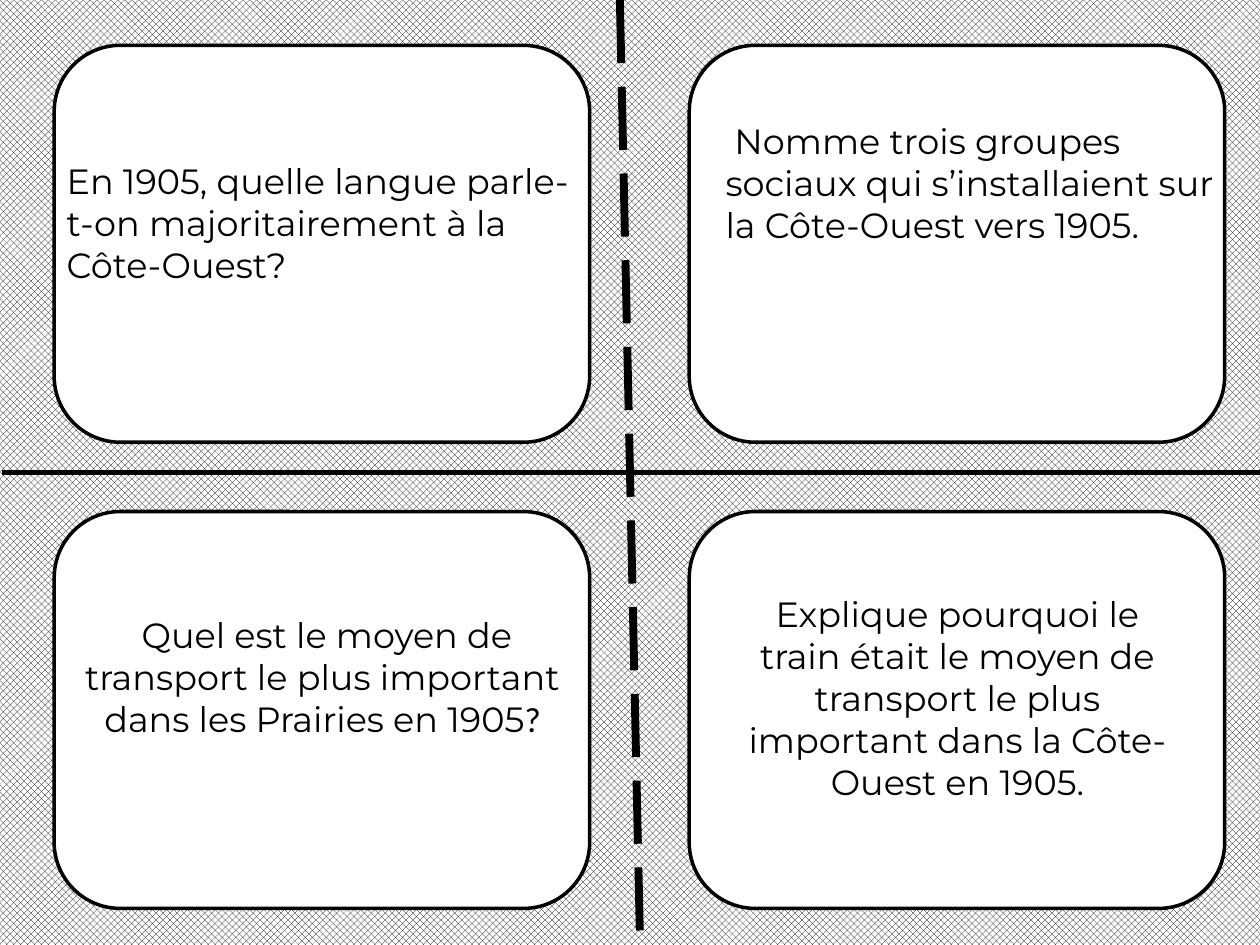
from lxml import etree
from pptx import Presentation
from pptx.dml.color import RGBColor
from pptx.enum import dml, shapes, text
from pptx.oxml.ns import qn
from pptx.util import Inches, Pt

BLACK = RGBColor(0, 0, 0)
WHITE = RGBColor(255, 255, 255)
FONT = "Montserrat"
LEFT, CENTER = text.PP_ALIGN.LEFT, text.PP_ALIGN.CENTER

COLUMNS, ROWS = (0.43, 5.47), (0.36, 4.06)
CARD_W, CARD_H = 4.25, 3.15

DIVIDERS = [
    ((4.92, 0), (5.08, 7.5), 4.5, dml.MSO_LINE.LONG_DASH),
    ((0.02, 3.75), (10.22, 3.75), 3, dml.MSO_LINE.SOLID),
]

QUESTIONS = [
    ((0.43, 1.22, 4.25, 1.45), LEFT, 0, [
        ("En 1905, quelle langue parle-t-on majoritairement à la Côte-Ouest?", FONT)]),
    ((0.55, 4.82, 4.02, 1.45), CENTER, 0.07, [
        ("Quel est le moyen de transport le plus important dans les Prairies en 1905", FONT),
        ("?", "Calibri")]),
    ((5.66, 0.9, 4.09, 1.78), LEFT, 0.07, [
        ("Nomme trois groupes sociaux qui s’installaient sur la Côte-Ouest vers 1905.", FONT)]),
    ((5.75, 4.65, 3.7, 2.12), CENTER, 0, [
        ("Explique pourquoi le train était le moyen de transport le plus important "
         "dans la Côte-Ouest en 1905.", FONT)]),
]


def add_divider(s, start, end, width, dash):
    line = s.shapes.add_connector(
        shapes.MSO_CONNECTOR.STRAIGHT, *map(Inches, start + end))
    line.line.color.rgb = BLACK
    line.line.width = Pt(width)
    line.line.dash_style = dash
    etree.SubElement(line._element.spPr, qn("a:effectLst"))


def add_card(s, x, y):
    sp = s.shapes.add_shape(
        shapes.MSO_SHAPE.ROUNDED_RECTANGLE, *map(Inches, (x, y, CARD_W, CARD_H)))
    sp.shadow.inherit = False
    sp.fill.solid()
    sp.fill.fore_color.rgb = WHITE
    sp.line.color.rgb = BLACK
    sp.line.width = Pt(2)


def add_question(s, box, align, indent, runs):
    tf = s.shapes.add_textbox(*map(Inches, box)).text_frame
    tf.word_wrap = True
    p = tf.paragraphs[0]
    p.alignment = align
    if indent:
        p._p.get_or_add_pPr().set("indent", str(Inches(indent)))
    for words, font in runs:
        r = p.add_run()
        r.text = words
        r.font.name = font
        r.font.size = Pt(20)
        r.font.color.rgb = BLACK


def main():
    prs = Presentation()
    prs.slide_width, prs.slide_height = Inches(10), Inches(7.5)
    s = prs.slides.add_slide(prs.slide_layouts[6])
    fill = s.background.fill
    fill.patterned()
    fill.pattern = dml.MSO_PATTERN.SOLID_DIAMOND
    fill.fore_color.rgb = BLACK
    fill.back_color.rgb = WHITE

    for divider in DIVIDERS:
        add_divider(s, *divider)
    for y in ROWS:
        for x in COLUMNS:
            add_card(s, x, y)
    for question in QUESTIONS:
        add_question(s, *question)
    prs.save("out.pptx")


if __name__ == "__main__":
    main()
